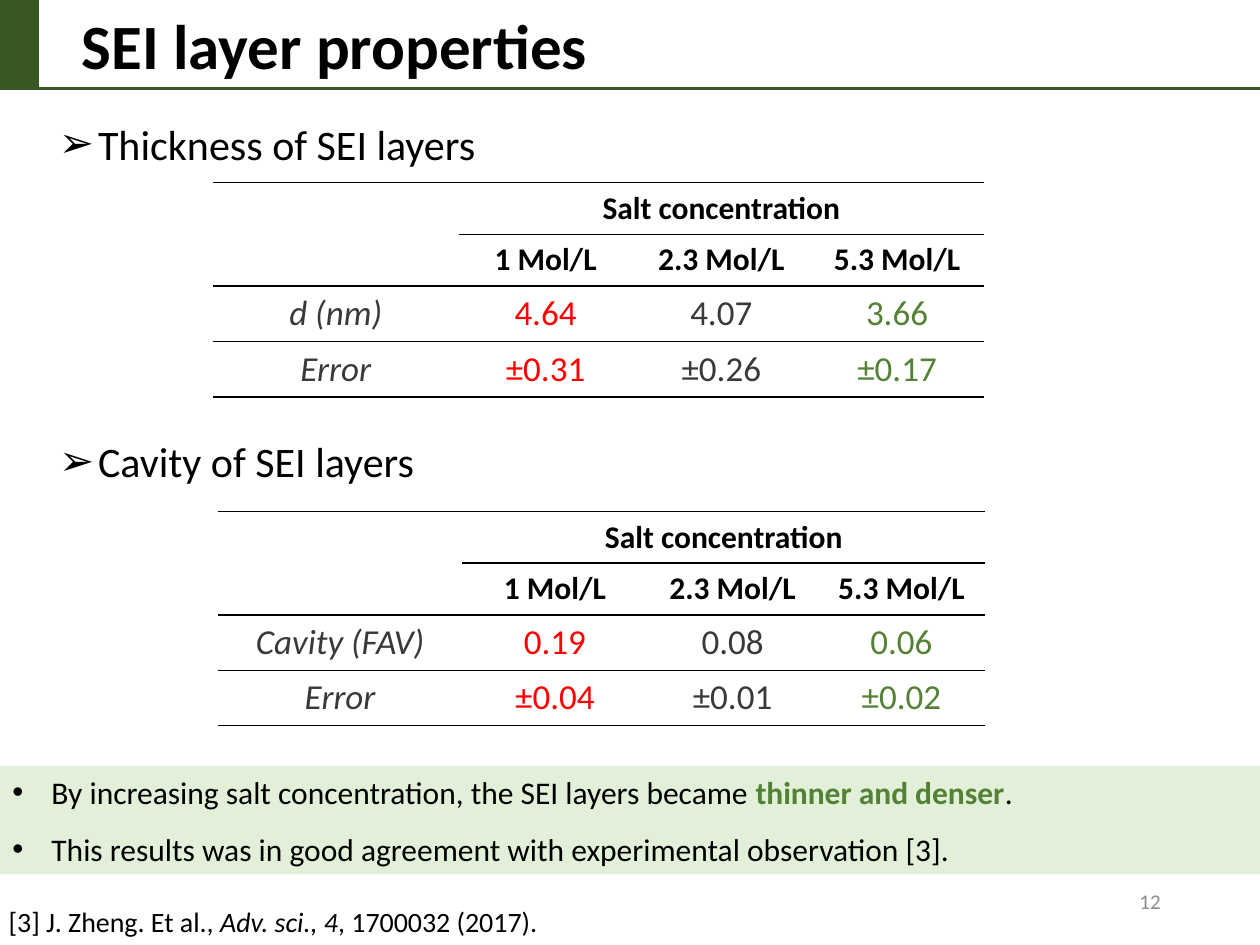
from lxml import etree
from pptx import Presentation
from pptx.dml.color import RGBColor
from pptx.enum import shapes, text
from pptx.oxml import ns
from pptx.util import Inches, Pt

BLACK = RGBColor(0x00, 0x00, 0x00)
CHARCOAL = RGBColor(0x3B, 0x38, 0x38)
GRAY = RGBColor(0x8C, 0x8C, 0x8C)
RED = RGBColor(0xFF, 0x00, 0x00)
GREEN = RGBColor(0x54, 0x82, 0x35)
DARK_GREEN = RGBColor(0x38, 0x57, 0x23)
PALE_GREEN = RGBColor(0xE2, 0xF0, 0xD9)

PLAIN_TABLE_STYLE = "{2D5ABB26-0587-4C30-8999-92F81FD0307C}"
CONCENTRATIONS = ["1 Mol/L", "2.3 Mol/L", "5.3 Mol/L"]
VALUE_COLORS = [CHARCOAL, RED, CHARCOAL, GREEN]


def add_run(paragraph, content, size, color=BLACK, bold=False, italic=False):
    run = paragraph.add_run()
    run.text = content
    run.font.name = "Calibri"
    run.font.size = Pt(size)
    run.font.bold = bold
    run.font.italic = italic
    run.font.color.rgb = color


def add_bullet(paragraph, character):
    properties = paragraph._p.get_or_add_pPr()
    properties.set("marL", str(Inches(0.31)))
    properties.set("indent", str(-Inches(0.31)))
    font = etree.SubElement(properties, ns.qn("a:buFont"))
    font.set("typeface", "Arial")
    bullet = etree.SubElement(properties, ns.qn("a:buChar"))
    bullet.set("char", character)


def add_text_box(slide, left, top, width, height, wrap=True):
    box = slide.shapes.add_textbox(
        Inches(left), Inches(top), Inches(width), Inches(height))
    box.text_frame.word_wrap = wrap
    return box.text_frame


def add_rectangle(slide, left, top, width, height, fill):
    shape = slide.shapes.add_shape(
        shapes.MSO_SHAPE.RECTANGLE,
        Inches(left), Inches(top), Inches(width), Inches(height))
    shape.shadow.inherit = False
    shape.fill.solid()
    shape.fill.fore_color.rgb = fill
    shape.line.fill.background()
    return shape


def add_header(slide, left, top, width, height):
    # Title
    title = slide.shapes.title
    title.left, title.top = Inches(left + 0.55), Inches(top)
    title.width, title.height = Inches(width - 0.55), Inches(height)
    frame = title.text_frame
    frame.auto_size = text.MSO_AUTO_SIZE.NONE
    frame.vertical_anchor = text.MSO_ANCHOR.MIDDLE
    frame.paragraphs[0].alignment = text.PP_ALIGN.LEFT
    add_run(frame.paragraphs[0], "SEI layer properties", 36, bold=True)

    # Side block and rule
    block = add_rectangle(slide, left, top, 0.3, height, DARK_GREEN)
    block.line.color.rgb = DARK_GREEN
    block.line.width = Pt(1)
    rule = slide.shapes.add_connector(
        shapes.MSO_CONNECTOR.STRAIGHT, Inches(left), Inches(top + 0.7),
        Inches(left + width), Inches(top + 0.7))
    rule.line.color.rgb = DARK_GREEN
    rule.line.width = Pt(1.5)
    etree.SubElement(rule._element.spPr, ns.qn("a:effectLst"))


def add_border(cell, side, width):
    line = etree.SubElement(cell._tc.get_or_add_tcPr(), ns.qn("a:" + side))
    line.set("w", str(Pt(width)))
    fill = etree.SubElement(line, ns.qn("a:solidFill"))
    etree.SubElement(fill, ns.qn("a:srgbClr")).set("val", str(BLACK))


def add_heading(slide, left, top, width, height, heading):
    paragraph = add_text_box(slide, left, top, width, height, wrap=False).paragraphs[0]
    add_bullet(paragraph, "➢")
    add_run(paragraph, heading, 24)


def add_property_table(slide, left, top, columns, quantity, values, errors):
    rows = [["", "Salt concentration", "", ""], ["", *CONCENTRATIONS],
            [quantity, *values], ["Error", *errors]]
    heights = [0.41, 0.41, 0.44, 0.44]
    table = slide.shapes.add_table(
        len(rows), len(columns), Inches(left), Inches(top),
        Inches(sum(columns)), Inches(sum(heights))).table
    table.first_row = table.horz_banding = False
    table._tbl.tblPr.find(ns.qn("a:tableStyleId")).text = PLAIN_TABLE_STYLE
    for column, width in zip(table.columns, columns):
        column.width = Inches(width)
    for row, height in zip(table.rows, heights):
        row.height = Inches(height)
    table.cell(0, 1).merge(table.cell(0, 3))

    for r, row in enumerate(rows):
        header = r < 2
        for c, content in enumerate(row):
            cell = table.cell(r, c)
            # Rules: thin between the data rows, none below the empty corner
            if r == 0:
                add_border(cell, "lnT", 1)
            if (r, c) != (0, 0):
                add_border(cell, "lnB", 0.5 if r == 2 else 1)
            cell.fill.background()
            cell.vertical_anchor = text.MSO_ANCHOR.MIDDLE
            if content:
                paragraph = cell.text_frame.paragraphs[0]
                paragraph.alignment = text.PP_ALIGN.CENTER
                add_run(paragraph, content, 18 if header else 20,
                        BLACK if header else VALUE_COLORS[c],
                        bold=header, italic=not header and c == 0)


def add_conclusions(slide, left, top, width, height):
    frame = add_rectangle(slide, left, top, width, height, PALE_GREEN).text_frame
    frame.word_wrap = True
    frame.vertical_anchor = text.MSO_ANCHOR.MIDDLE
    first, second = frame.paragraphs[0], frame.add_paragraph()
    second.line_spacing = 1.5
    for paragraph in (first, second):
        paragraph.alignment = text.PP_ALIGN.JUSTIFY
        add_bullet(paragraph, "•")
        # The bullet takes the colour of the first run
    add_run(first, "By increasing salt concentration, the SEI layers became ", 18)
    add_run(first, "thinner and denser", 18, GREEN, bold=True)
    add_run(first, ".", 18)
    add_run(second, "This results was in good agreement with experimental "
                    "observation [3].", 18)


def add_reference(slide, left, top, width, height):
    paragraph = add_text_box(slide, left, top, width, height).paragraphs[0]
    add_run(paragraph, "[3] J. Zheng. Et al., ", 16)
    add_run(paragraph, "Adv. sci., 4", 16, italic=True)
    add_run(paragraph, ", 1700032 (2017).", 16)


def add_page_number(slide, left, top, width, height):
    frame = add_text_box(slide, left, top, width, height)
    frame.vertical_anchor = text.MSO_ANCHOR.MIDDLE
    frame.paragraphs[0].alignment = text.PP_ALIGN.RIGHT
    add_run(frame.paragraphs[0], "12", 12, GRAY)


def main():
    presentation = Presentation()
    presentation.slide_width, presentation.slide_height = Inches(10), Inches(7.5)
    slide = presentation.slides.add_slide(presentation.slide_layouts[5])

    add_header(slide, 0, 0, 10, 0.71)
    add_heading(slide, 0.37, 0.89, 3.54, 0.5, "Thickness of SEI layers")
    add_property_table(slide, 1.69, 1.45, [1.95, 1.38, 1.41, 1.38], "d (nm)",
                       ["4.64", "4.07", "3.66"], ["±0.31", "±0.26", "±0.17"])
    add_heading(slide, 0.37, 3.41, 3.05, 0.5, "Cavity of SEI layers")
    add_property_table(slide, 1.73, 4.06, [1.94, 1.47, 1.35, 1.33], "Cavity (FAV)",
                       ["0.19", "0.08", "0.06"], ["±0.04", "±0.01", "±0.02"])
    add_conclusions(slide, 0, 6.08, 10, 0.86)
    add_reference(slide, -0.03, 7.13, 6.88, 0.37)
    add_page_number(slide, 7.06, 6.95, 2.25, 0.4)

    presentation.save("out.pptx")


if __name__ == "__main__":
    main()
